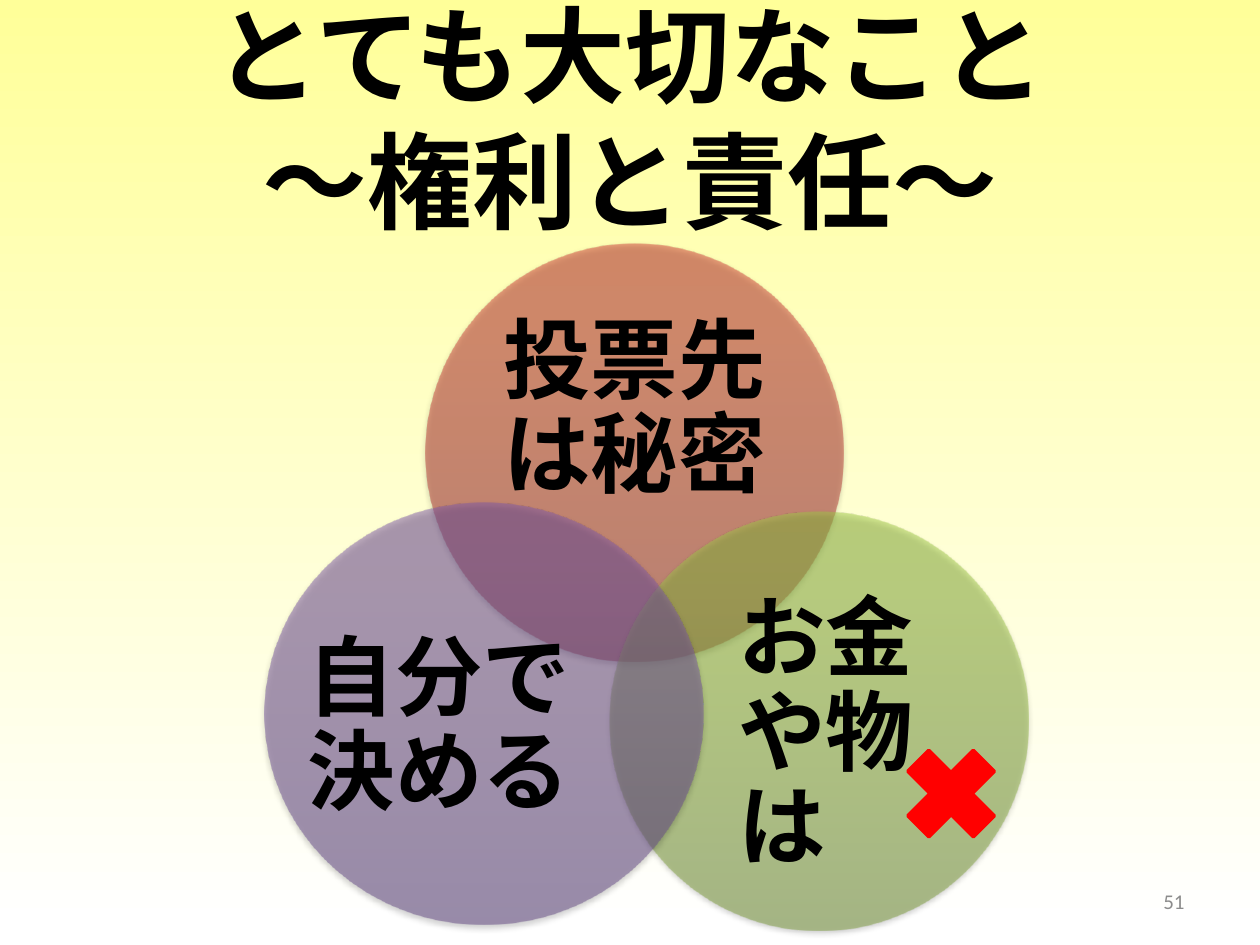
import pptx
import pptx.util
import pptx.dml.color
import pptx.enum.shapes
import pptx.enum.text
import pptx.oxml
import pptx.oxml.ns
from lxml import etree

Pt = pptx.util.Pt
ALIGN = pptx.enum.text.PP_ALIGN
SHAPES = pptx.enum.shapes.MSO_SHAPE
JAPANESE = "Noto Sans CJK JP"
NAMESPACE = pptx.oxml.ns.nsdecls("a")
COLORS = {
    "black": "000000",
    "red": "FF0000",
    "number": "8C8C8C",
    "background": [(0, "FFFF99"), (98, "FFFFFF")],
    "secret": [(0, "9C2F2D"), (80, "CB3E3A"), (100, "CE3B37")],
    "money": [(0, "779737"), (80, "9BC348"), (100, "9DC746")],
    "decide": [(0, "5F4480"), (80, "7B58A6"), (100, "7C57A8")],
}
CIRCLES = [
    ("secret", (243, 139, 239, 239), "投票先は秘密", (32, 42.5, 175.5, 107), ALIGN.CENTER),
    ("money", (348.5, 292.5, 239, 239), "お金や物は", (73.5, 62, 143, 132), ALIGN.LEFT),
    ("decide", (151, 287.5, 251, 241), "自分で決める", (24, 62.5, 151.5, 132.5), ALIGN.CENTER),
]


def rgb(name):
    return pptx.dml.color.RGBColor.from_string(COLORS[name])


def gradient(stops, angle, opacity=100):
    marks = "".join(
        f'<a:gs pos="{position * 1000}"><a:srgbClr val="{color}">'
        f'<a:alpha val="{opacity * 1000}"/></a:srgbClr></a:gs>'
        for position, color in stops
    )
    return pptx.oxml.parse_xml(
        f'<a:gradFill {NAMESPACE} rotWithShape="1"><a:gsLst>{marks}</a:gsLst>'
        f'<a:lin ang="{angle * 60000}" scaled="0"/></a:gradFill>'
    )


def replace_fill(fill, parent, new_fill):
    fill.solid()
    old_fill = parent.find(pptx.oxml.ns.qn("a:solidFill"))
    parent.replace(old_fill, new_fill)


def add_text(slide, box, lines, size, color="black", font=JAPANESE, bold=True,
             align=ALIGN.CENTER, spacing=1.0, inset=(7.2, 3.6)):
    shape = slide.shapes.add_textbox(*map(Pt, box))
    frame = shape.text_frame
    frame.word_wrap = True
    frame.vertical_anchor = pptx.enum.text.MSO_ANCHOR.MIDDLE
    frame.margin_left = frame.margin_right = Pt(inset[0])
    frame.margin_top = frame.margin_bottom = Pt(inset[1])
    paragraph = frame.paragraphs[0]
    paragraph.alignment = align
    paragraph.line_spacing = spacing
    for index, line in enumerate(lines):
        if index:
            paragraph.add_line_break()
        run = paragraph.add_run()
        run.text = line
        run.font.size = Pt(size)
        run.font.bold = bold
        run.font.color.rgb = rgb(color)
        run.font.name = font
        east_asian = etree.SubElement(run.font._element, pptx.oxml.ns.qn("a:ea"))
        east_asian.set("typeface", font)


def add_circle(slide, box, stops, text, text_box, align):
    left, top, width, height = box
    circle = slide.shapes.add_shape(SHAPES.OVAL, *map(Pt, box))
    circle.line.fill.background()
    properties = circle._element.spPr
    replace_fill(circle.fill, properties, gradient(stops, 270, 50))
    properties.append(pptx.oxml.parse_xml(
        f'<a:effectLst {NAMESPACE}><a:outerShdw blurRad="{Pt(3.1)}" dist="{Pt(1.8)}" '
        'dir="5400000" rotWithShape="0"><a:srgbClr val="000000">'
        '<a:alpha val="35000"/></a:srgbClr></a:outerShdw></a:effectLst>'
    ))
    dx, dy, text_width, text_height = text_box
    add_text(slide, (left + dx, top + dy, text_width, text_height), [text], 50,
             align=align, spacing=0.9, inset=(0, 0))


def add_cross(slide, box):
    cross = slide.shapes.add_shape(SHAPES.MATH_MULTIPLY, *map(Pt, box))
    cross.shadow.inherit = False
    cross.fill.solid()
    cross.fill.fore_color.rgb = rgb("red")
    cross.line.color.rgb = rgb("red")
    cross.line.width = Pt(2)
    etree.SubElement(cross.line._ln, pptx.oxml.ns.qn("a:round"))


def add_background(slide):
    fill = slide.background.fill
    fill.solid()
    properties = slide._element.cSld.bg.bgPr
    replace_fill(fill, properties, gradient(COLORS["background"], 90))


def main():
    presentation = pptx.Presentation()
    presentation.slide_width = Pt(720)
    presentation.slide_height = Pt(540)
    slide = presentation.slides.add_slide(presentation.slide_layouts[6])
    add_background(slide)
    add_text(slide, (516, 500.5, 168, 29), ["51"], 12, "number", "Calibri", False, ALIGN.RIGHT)
    add_text(slide, (36, 21.6, 648, 90), ["とても大切なこと", "～権利と責任～"], 60)
    for name, box, text, text_box, align in CIRCLES:
        add_circle(slide, box, COLORS[name], text, text_box, align)
    add_cross(slide, (507.5, 417.5, 72, 72))
    presentation.save("out.pptx")


if __name__ == "__main__":
    main()
